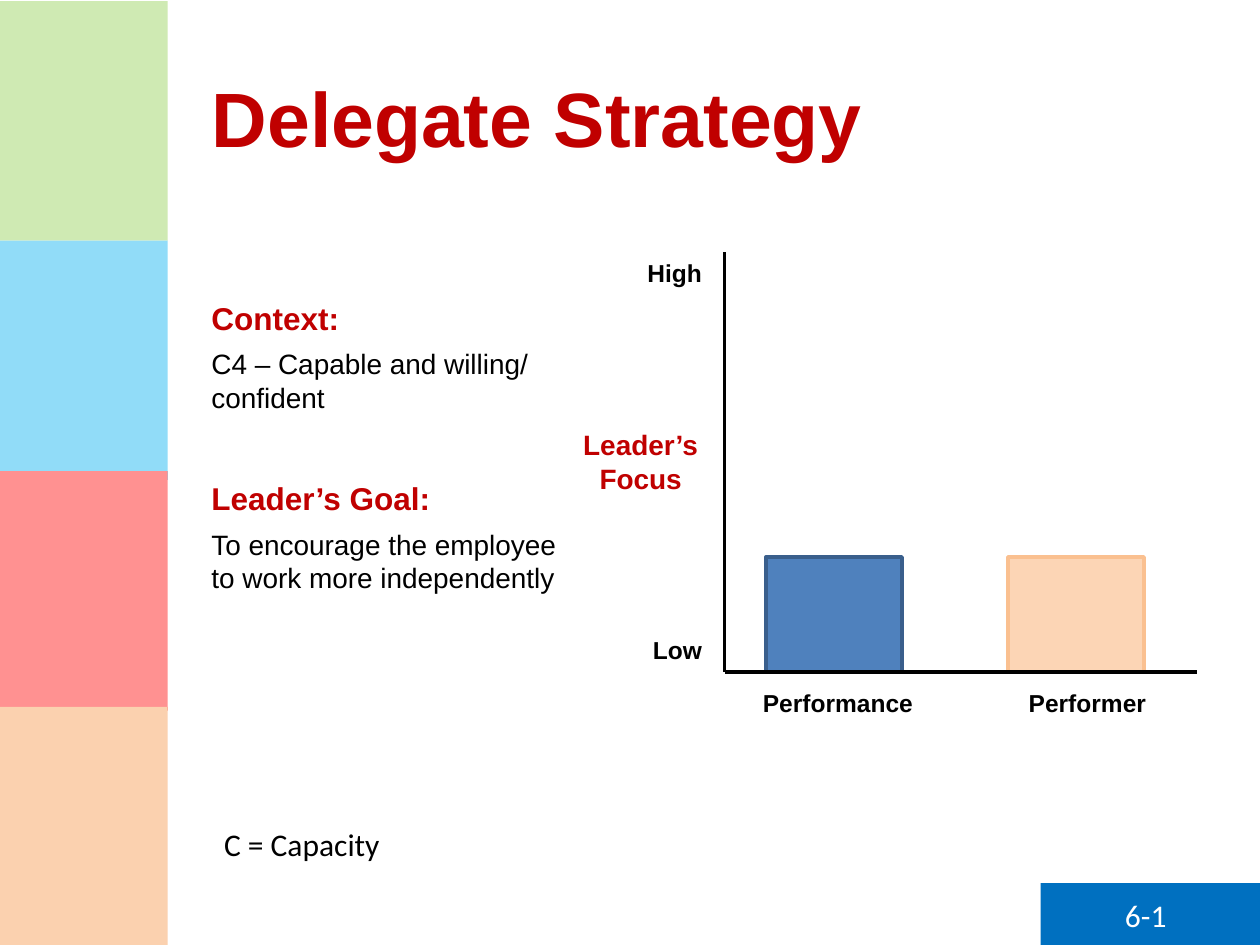
from dataclasses import dataclass

from lxml.etree import SubElement
from pptx import Presentation
from pptx.dml.color import RGBColor
from pptx.enum.shapes import MSO_CONNECTOR, MSO_SHAPE
from pptx.enum.text import MSO_ANCHOR, PP_ALIGN
from pptx.oxml.ns import qn
from pptx.util import Inches, Pt


@dataclass(frozen=True)
class Theme:
    red: str = "C00000"
    black: str = "000000"
    white: str = "FFFFFF"
    footer_blue: str = "0070C0"
    side_bands: tuple = ("92D050", "00B0F0", "FF0000", "F79646")
    veil_opacity: int = 57
    performance_bar: tuple = ("4F81BD", "3A5F8C")
    performer_bar: tuple = ("FCD5B5", "FAC090")
    heading_font: str = "Arial"
    note_font: str = "Calibri"
    title_size: int = 44
    heading_size: int = 18
    body_size: int = 16
    label_size: int = 14


@dataclass(frozen=True)
class Line:
    """One paragraph of text and its look; gaps are in points."""
    text: str
    size: int
    color: str = "000000"
    bold: bool = True
    align: PP_ALIGN = PP_ALIGN.LEFT
    before: int = 0
    after: int = 0
    font: str = "Arial"


THEME = Theme()


def format_paragraph(paragraph, line):
    paragraph.text = line.text
    paragraph.alignment = line.align
    paragraph.space_before = Pt(line.before)
    paragraph.space_after = Pt(line.after)
    for run in paragraph.runs:
        run.font.name = line.font
        run.font.size = Pt(line.size)
        run.font.bold = line.bold
        run.font.color.rgb = RGBColor.from_string(line.color)


def add_text(slide, left, top, width, height, *lines):
    box = slide.shapes.add_textbox(Inches(left), Inches(top), Inches(width), Inches(height))
    frame = box.text_frame
    frame.word_wrap = True
    for index, line in enumerate(lines):
        paragraph = frame.add_paragraph() if index else frame.paragraphs[0]
        format_paragraph(paragraph, line)


def add_rectangle(slide, left, top, width, height, fill, outline=None):
    shape = slide.shapes.add_shape(
        MSO_SHAPE.RECTANGLE, Inches(left), Inches(top), Inches(width), Inches(height))
    shape.shadow.inherit = False
    shape.fill.solid()
    shape.fill.fore_color.rgb = RGBColor.from_string(fill)
    if outline:
        shape.line.color.rgb = RGBColor.from_string(outline)
        shape.line.width = Pt(2)
    else:
        shape.line.fill.background()
    return shape


def set_opacity(shape, percent):
    color = shape.fill._xPr.find(qn("a:solidFill"))[0]
    SubElement(color, qn("a:alpha")).set("val", str(percent * 1000))


def add_axis(slide, start, end):
    axis = slide.shapes.add_connector(
        MSO_CONNECTOR.STRAIGHT, *(Inches(value) for value in (*start, *end)))
    axis.line.color.rgb = RGBColor.from_string(THEME.black)
    axis.line.width = Pt(2.25)
    SubElement(axis._element.spPr, qn("a:effectLst"))


def add_side_bands(slide):
    for top, color in zip((0.01, 1.91, 3.74, 5.61), THEME.side_bands):
        add_rectangle(slide, 0, top, 1.33, 1.9, color)
    veil = add_rectangle(slide, 0, 0, 1.33, 7.5, THEME.white)
    set_opacity(veil, THEME.veil_opacity)


def set_title(slide, text):
    title = slide.shapes.title
    title.left, title.top = Inches(1.58), Inches(0.3)
    title.width, title.height = Inches(7.92), Inches(1.25)
    title.text_frame.vertical_anchor = MSO_ANCHOR.MIDDLE
    format_paragraph(title.text_frame.paragraphs[0], Line(text, THEME.title_size, THEME.red))


def add_focus_diagram(slide):
    axis_left, axis_top, baseline = 5.75, 2, 5.33
    bar_top = 4.42
    bars = (("Performance", 6.08, 5.94, THEME.performance_bar),
            ("Performer", 8, 7.92, THEME.performer_bar))
    for name, bar_left, label_left, colors in bars:
        add_rectangle(slide, bar_left, bar_top, 1.08, baseline - bar_top, *colors)
        add_text(slide, label_left, 5.41, 1.42, 0.34,
                 Line(name, THEME.label_size, align=PP_ALIGN.CENTER))
    add_axis(slide, (axis_left, axis_top), (axis_left, baseline))
    add_axis(slide, (axis_left, baseline), (9.5, baseline))
    add_text(slide, 4.5, axis_top, 1.17, 3.47,
             Line("High", THEME.label_size, align=PP_ALIGN.RIGHT),
             Line("Leader’s\vFocus", THEME.body_size, THEME.red,
                  align=PP_ALIGN.CENTER, before=80),
             Line("Low", THEME.label_size, align=PP_ALIGN.RIGHT, before=80))


def add_strategy_text(slide):
    add_text(slide, 1.58, 2.32, 3.17, 2.52,
             Line("Context:", THEME.heading_size, THEME.red, after=6),
             Line("C4 – Capable and willing/ confident", THEME.body_size, bold=False),
             Line("Leader’s Goal:", THEME.heading_size, THEME.red, before=37, after=6),
             Line("To encourage the employee\vto work more independently",
                  THEME.body_size, bold=False))
    add_text(slide, 1.68, 6.5, 1.5, 0.4,
             Line("C = Capacity", THEME.heading_size, bold=False, font=THEME.note_font))


def add_page_number(slide, text):
    add_rectangle(slide, 8.26, 7.01, 1.75, 0.5, THEME.footer_blue)
    add_text(slide, 8.83, 7.06, 0.75, 0.4,
             Line(text, THEME.heading_size, THEME.white, bold=False, font=THEME.note_font))


def main():
    presentation = Presentation()
    presentation.slide_width, presentation.slide_height = Inches(10), Inches(7.5)
    slide = presentation.slides.add_slide(presentation.slide_layouts[5])
    add_side_bands(slide)
    set_title(slide, "Delegate Strategy")
    add_page_number(slide, "6-1")
    add_focus_diagram(slide)
    add_strategy_text(slide)
    presentation.save("out.pptx")


if __name__ == "__main__":
    main()
